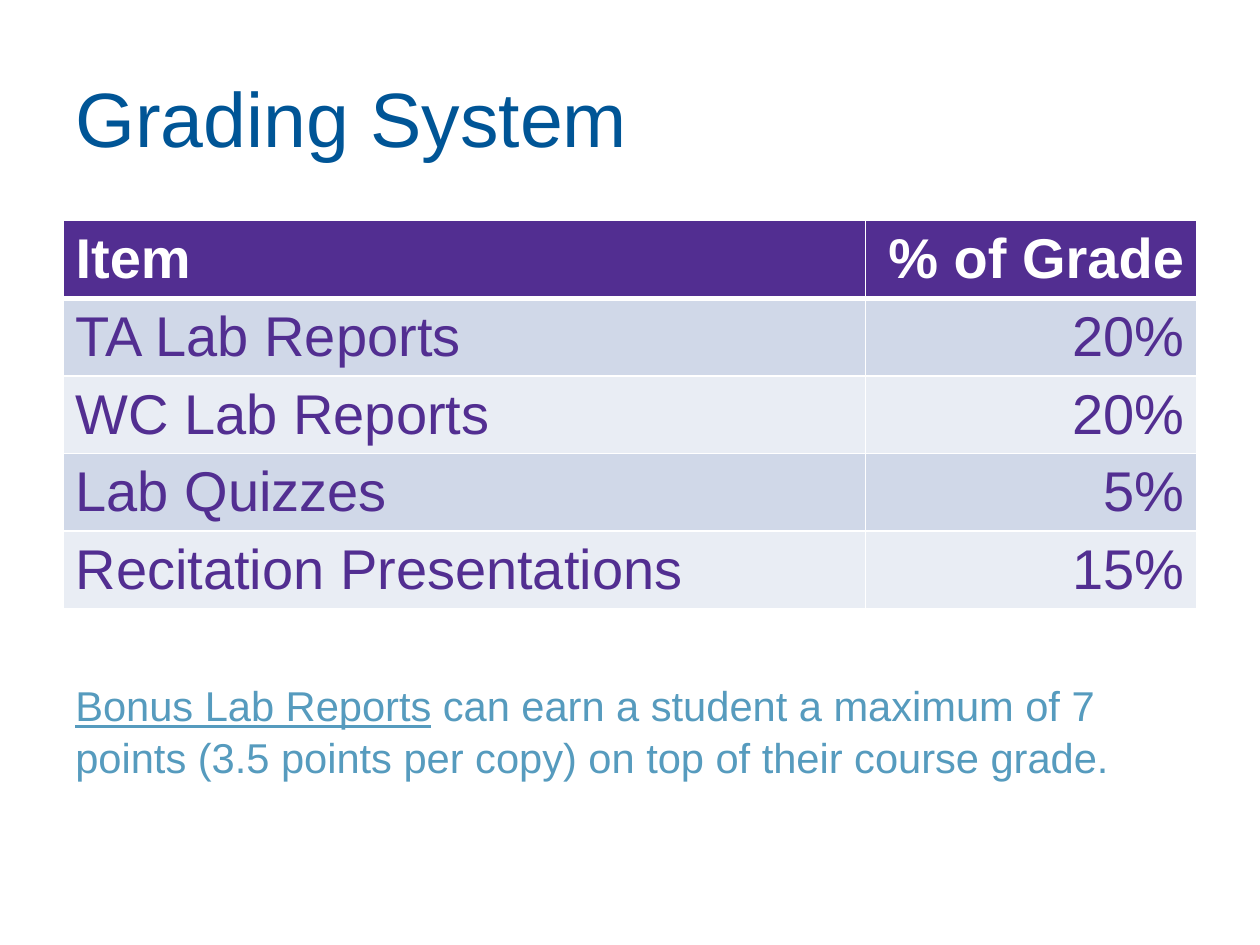
from lxml.etree import SubElement
from pptx import Presentation
from pptx.dml.color import RGBColor
from pptx.enum.text import MSO_ANCHOR as Anchor, PP_ALIGN as Align
from pptx.oxml.ns import qn
from pptx.util import Pt

WHITE, PURPLE, BLUE, SKY = "FFFFFF", "522E91", "005596", "569BBE"
BANDS = ("D0D8E8", "E9EDF4")
GRADES = [
    ("Item", "% of Grade"),
    ("TA Lab Reports", "20%"),
    ("WC Lab Reports", "20%"),
    ("Lab Quizzes", "5%"),
    ("Recitation Presentations", "15%"),
]


def color(value):
    return RGBColor.from_string(value)


class SlideBuilder:
    """Adds styled text and tables to one slide."""

    font_name = "Arial"

    def __init__(self, presentation):
        self.slide = presentation.slides.add_slide(presentation.slide_layouts[6])

    def style(self, font, size, ink, bold=False):
        font.name, font.size, font.bold = self.font_name, Pt(size), bold
        font.color.rgb = color(ink)

    def text(self, left, top, width, height, parts, size, ink,
             anchor=Anchor.TOP, line_spacing=1.0):
        box = self.slide.shapes.add_textbox(Pt(left), Pt(top), Pt(width), Pt(height))
        frame = box.text_frame
        frame.word_wrap = True
        frame.vertical_anchor = anchor
        paragraph = frame.paragraphs[0]
        paragraph.line_spacing = line_spacing
        for words, underline in parts:
            run = paragraph.add_run()
            run.text = words
            self.style(run.font, size, ink)
            run.font.underline = underline

    def borders(self, cell, widths):
        properties = cell._tc.get_or_add_tcPr()
        for index, (side, width) in enumerate(zip("LRTB", widths)):
            line = properties.makeelement(qn(f"a:ln{side}"), {"w": str(Pt(width))})
            fill = SubElement(line, qn("a:solidFill"))
            SubElement(fill, qn("a:srgbClr"), val=WHITE)
            properties.insert(index, line)

    def table(self, left, top, column_widths, row_height, rows, size):
        shape = self.slide.shapes.add_table(
            len(rows), len(column_widths), Pt(left), Pt(top),
            Pt(sum(column_widths)), Pt(row_height * len(rows)))
        table = shape.table
        for column, width in zip(table.columns, column_widths):
            column.width = Pt(width)
        for row_index, values in enumerate(rows):
            header = row_index == 0
            table.rows[row_index].height = Pt(row_height)
            top_width = 3 if row_index == 1 else 1
            bottom_width = 3 if header else 1
            for column_index, value in enumerate(values):
                cell = table.cell(row_index, column_index)
                cell.text_frame.text = value
                cell.vertical_anchor = Anchor.MIDDLE
                cell.margin_top = cell.margin_bottom = Pt(3)
                cell.fill.solid()
                cell.fill.fore_color.rgb = color(
                    PURPLE if header else BANDS[(row_index - 1) % 2])
                paragraph = cell.text_frame.paragraphs[0]
                paragraph.alignment = Align.RIGHT if column_index else Align.LEFT
                self.style(paragraph.runs[0].font, size,
                           WHITE if header else PURPLE, header)
                self.borders(cell, (1, 1, top_width, bottom_width))


def main():
    presentation = Presentation()
    presentation.slide_width, presentation.slide_height = Pt(720), Pt(540)
    builder = SlideBuilder(presentation)
    builder.text(36, 21.6, 648, 90, [("Grading System", False)], 44, BLUE, Anchor.MIDDLE)
    builder.table(36, 126, (458.6, 189.4), 43, GRADES, 32)
    builder.text(36, 384, 648, 72, [
        ("Bonus Lab Reports", True),
        (" can earn a student a maximum of 7 points (3.5 points per copy)"
         " on top of their course grade.", False),
    ], 23.8, SKY, line_spacing=1.04)
    presentation.save("out.pptx")


if __name__ == "__main__":
    main()
